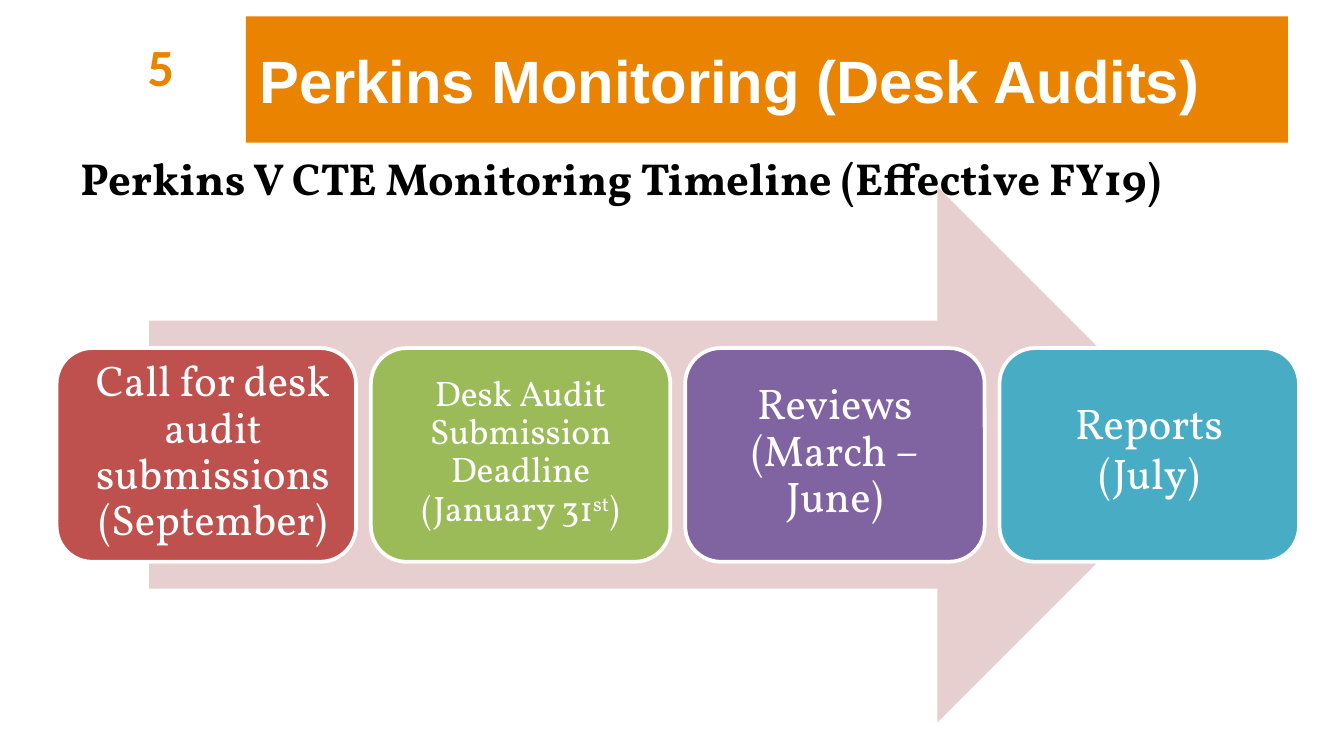
"""Build the Perkins desk audit timeline slide."""
from dataclasses import dataclass

from pptx import Presentation
from pptx.dml.color import RGBColor
from pptx.enum.shapes import MSO_SHAPE
from pptx.enum.text import MSO_ANCHOR, PP_ALIGN
from pptx.util import Cm, Pt

RECTANGLE = MSO_SHAPE.RECTANGLE
ROUNDED = MSO_SHAPE.ROUNDED_RECTANGLE
RIGHT_ARROW = MSO_SHAPE.RIGHT_ARROW
LEFT = PP_ALIGN.LEFT
CENTER = PP_ALIGN.CENTER
TOP = MSO_ANCHOR.TOP
MIDDLE = MSO_ANCHOR.MIDDLE

WHITE = RGBColor(0xFF, 0xFF, 0xFF)
BLACK = RGBColor(0x00, 0x00, 0x00)
ORANGE = RGBColor(0xE9, 0x83, 0x00)
PINK = RGBColor(0xE7, 0xCF, 0xCF)
RED = RGBColor(0xBE, 0x50, 0x4D)
GREEN = RGBColor(0x9B, 0xBA, 0x58)
PURPLE = RGBColor(0x80, 0x63, 0xA1)
TEAL = RGBColor(0x48, 0xAC, 0xC5)

STAGE_LEFT, STAGE_TOP, STAGE_STEP = 1.07, 6.58, 5.94
STAGE_WIDTH, STAGE_HEIGHT = 5.66, 4.04


@dataclass(frozen=True)
class Stage:
    """One step of the timeline, with insets in centimetres."""

    text: str
    fill: RGBColor
    left_inset: float
    right_inset: float
    size: int = 23
    line_spacing: float = 0.9
    bottom_inset: float = 0.1
    superscript: str = ""


STAGES = (
    Stage("Call for desk audit submissions (September)", RED, 0.34, 0.08),
    Stage("Desk Audit Submission Deadline (January 31st)", GREEN, 0.2, 0.2,
          size=19, superscript="st"),
    Stage("Reviews (March – June)", PURPLE, 0.95, 0.95),
    Stage("Reports\n(July)", TEAL, 0.5, 0.5, line_spacing=0.96, bottom_inset=0.2),
)


def write_text(frame, text: str, *, size: float, color: RGBColor,
               font: str = "Vollkorn", bold: bool = False, align=LEFT,
               anchor=TOP, insets=(0, 0, 0, 0), line_spacing: float = 1.0,
               superscript: str = "") -> None:
    """Fill a text frame, one paragraph per line, raising the superscript."""
    frame.word_wrap = True
    frame.vertical_anchor = anchor
    (frame.margin_left, frame.margin_top,
     frame.margin_right, frame.margin_bottom) = map(Cm, insets)
    for index, line in enumerate(text.split("\n")):
        paragraph = frame.add_paragraph() if index else frame.paragraphs[0]
        paragraph.alignment = align
        paragraph.line_spacing = line_spacing
        parts = line.partition(superscript) if superscript else (line,)
        for part in filter(None, parts):
            run = paragraph.add_run()
            run.text = part
            run.font.name = font
            run.font.size = Pt(size)
            run.font.bold = bold
            run.font.color.rgb = color
            if part == superscript:
                run.font._element.set("baseline", "27000")


def add_block(slide, kind, left: float, top: float, width: float,
              height: float, fill: RGBColor):
    """Add a flat filled shape without an outline."""
    block = slide.shapes.add_shape(kind, Cm(left), Cm(top), Cm(width), Cm(height))
    block.shadow.inherit = False
    block.fill.solid()
    block.fill.fore_color.rgb = fill
    block.line.fill.background()
    return block


def add_label(slide, text: str, left: float, top: float, width: float,
              height: float, **text_format) -> None:
    """Add a text box."""
    label = slide.shapes.add_textbox(Cm(left), Cm(top), Cm(width), Cm(height))
    write_text(label.text_frame, text, **text_format)


def add_stage(slide, stage: Stage, left: float) -> None:
    """Add one timeline card."""
    card = add_block(slide, ROUNDED, left, STAGE_TOP, STAGE_WIDTH,
                     STAGE_HEIGHT, stage.fill)
    card.line.color.rgb = WHITE
    card.line.width = Pt(2)
    write_text(card.text_frame, stage.text, size=stage.size, color=WHITE,
               align=CENTER, anchor=MIDDLE,
               insets=(stage.left_inset, 0, stage.right_inset, stage.bottom_inset),
               line_spacing=stage.line_spacing, superscript=stage.superscript)


def main() -> None:
    """Build and save the slide."""
    presentation = Presentation()
    presentation.slide_width = Cm(25.4)
    presentation.slide_height = Cm(14.29)
    slide = presentation.slides.add_slide(presentation.slide_layouts[6])

    banner = add_block(slide, RECTANGLE, 4.65, 0.31, 19.69, 2.39, ORANGE)
    write_text(banner.text_frame, "Perkins Monitoring (Desk Audits)", size=32,
               color=WHITE, font="Arial", bold=True, anchor=MIDDLE,
               insets=(0.25, 0, 0, 0))
    add_label(slide, "5", 2.79, 0.64, 0.8, 1.24, size=28, color=ORANGE,
              font="Calibri", bold=True)
    add_label(slide, "Perkins V CTE Monitoring Timeline (Effective FY19)",
              1.52, 2.84, 21.5, 1.1, size=24, color=BLACK, bold=True)

    add_block(slide, RIGHT_ARROW, 2.82, 3.53, 19.96, 10.13, PINK)
    for index, stage in enumerate(STAGES):
        add_stage(slide, stage, STAGE_LEFT + index * STAGE_STEP)

    presentation.save("out.pptx")


if __name__ == "__main__":
    main()
